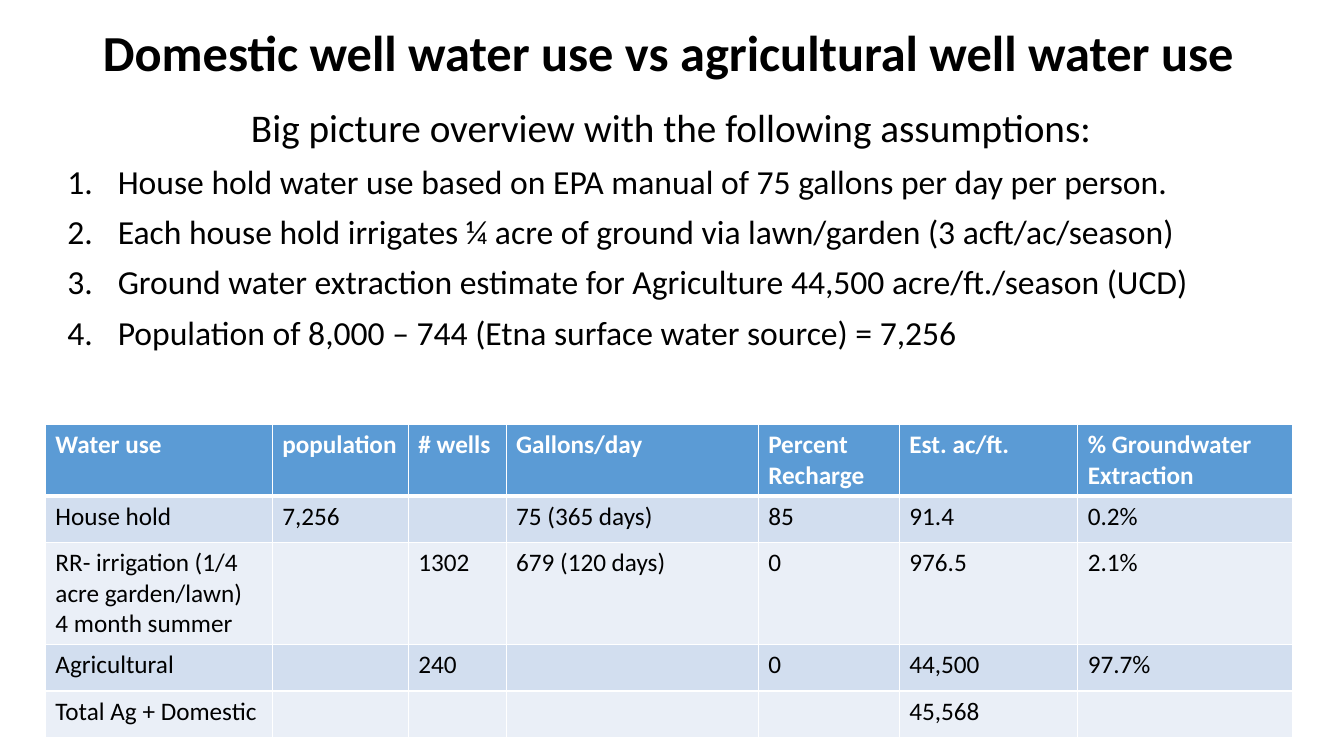
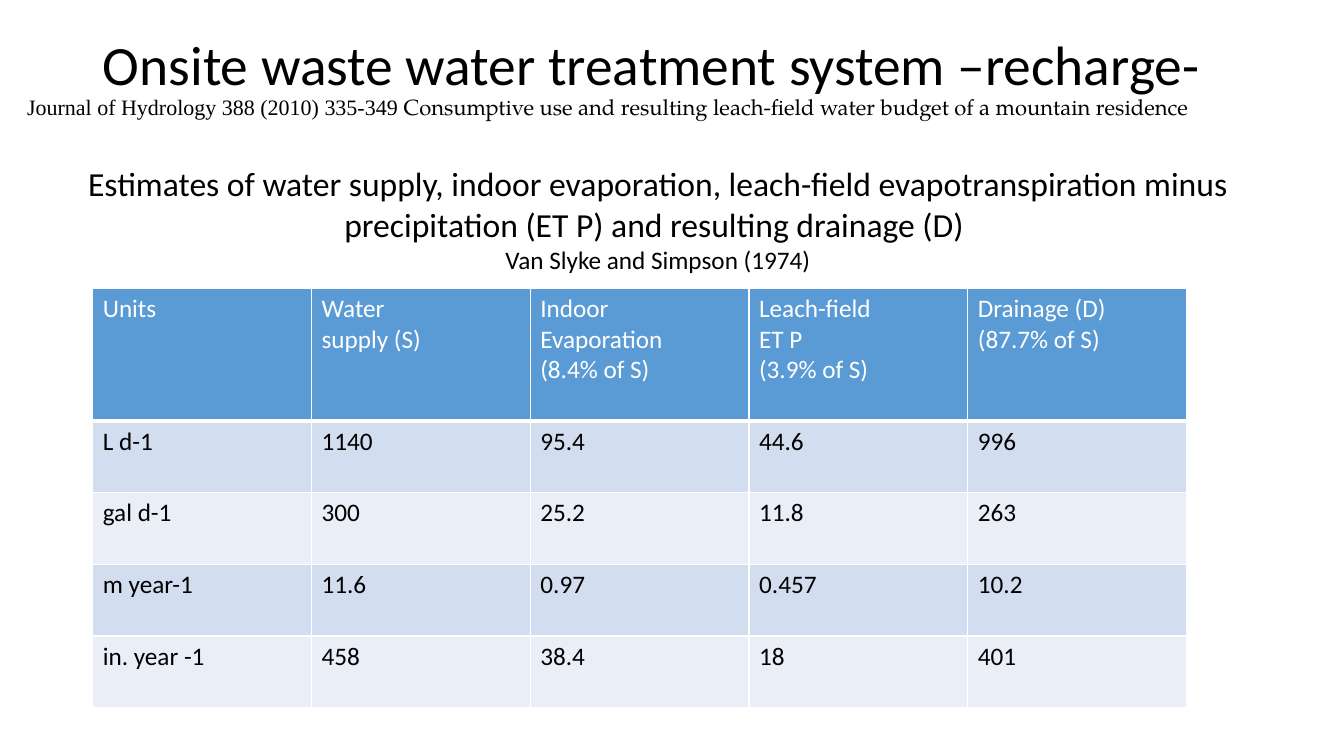
from lxml import etree
from pptx import Presentation
from pptx import util as u
from pptx.dml.color import RGBColor
from pptx.enum import text
from pptx.oxml import ns

INK = {"text": "000000", "white": "FFFFFF", "head": "5B9BD5",
       "odd": "D2DEEF", "even": "EAEFF7"}
FONT = "Calibri"
LEFT, MID = text.PP_ALIGN.LEFT, text.PP_ALIGN.CENTER
TOP, CORE = text.MSO_ANCHOR.TOP, text.MSO_ANCHOR.MIDDLE


def color(name):
    return RGBColor.from_string(INK[name])


def put(frame, words, size=18, font=FONT, ink="text", bold=False, align=LEFT,
        lead=1.0, gap=0, number=False, join=False):
    para = frame.paragraphs[-1]
    if para.runs and not join:
        para = frame.add_paragraph()
    if not join:
        para.alignment = align
        para.line_spacing = lead
        para.space_before = u.Pt(gap)
        if number:
            prop = para._p.get_or_add_pPr()
            prop.set("marL", str(u.Inches(0.5)))
            prop.set("indent", str(-u.Inches(0.5)))
            etree.SubElement(prop, ns.qn("a:buFont"), typeface="+mj-lt")
            etree.SubElement(prop, ns.qn("a:buAutoNum"), type="arabicPeriod")
    for i, line in enumerate(words.split("\n")):
        if i:
            para.add_line_break()
        run = para.add_run()
        run.text = line
        run.font.size = u.Pt(size)
        run.font.name = font
        run.font.bold = bold
        run.font.color.rgb = color(ink)


def setup(frame, anchor):
    frame.word_wrap = True
    frame.auto_size = text.MSO_AUTO_SIZE.NONE
    frame.vertical_anchor = anchor
    return frame


def head(slide, box, words, **fmt):
    title = slide.shapes.title
    title.left, title.top, title.width, title.height = map(u.Inches, box)
    put(setup(title.text_frame, CORE), words, lead=0.9, **fmt)


def area(slide, box):
    shape = slide.shapes.add_textbox(*map(u.Inches, box))
    return setup(shape.text_frame, TOP)


def edge(cell, low):
    prop = cell._tc.get_or_add_tcPr()
    for i, side in enumerate(("L", "R", "T", "B")):
        line = etree.Element(ns.qn("a:ln" + side))
        line.set("w", str(u.Pt(low if side == "B" else 1)))
        fill = etree.SubElement(line, ns.qn("a:solidFill"))
        etree.SubElement(fill, ns.qn("a:srgbClr"), val=INK["white"])
        prop.insert(i, line)


def grid(slide, left, top, cols, rows, data, bold):
    shape = slide.shapes.add_table(
        len(rows), len(cols), u.Inches(left), u.Inches(top),
        u.Inches(sum(cols)), u.Inches(sum(rows)))
    table = shape.table
    for col, wide in zip(table.columns, cols):
        col.width = u.Inches(wide)
    for r, (tall, line) in enumerate(zip(rows, data)):
        table.rows[r].height = u.Inches(tall)
        first = r == 0
        for c, words in enumerate(line):
            cell = table.cell(r, c)
            cell.fill.solid()
            cell.fill.fore_color.rgb = color(
                "head" if first else "odd" if r % 2 else "even")
            edge(cell, 3 if first else 1)
            if words:
                put(cell.text_frame, words, bold=bold and first,
                    ink="white" if first else "text")


def usage(slide):
    head(slide, (0.92, 0.21, 11.89, 0.67),
         "Domestic well water use vs agricultural well water use",
         size=36, bold=True)
    frame = area(slide, (0.57, 1.03, 12.17, 2.71))
    put(frame, "Big picture overview with the following assumptions:",
        size=28, align=MID, lead=0.9)
    for item in (
        "House hold water use based on EPA manual of 75 gallons per day per person.",
        "Each house hold irrigates ¼ acre of ground via lawn/garden (3 acft/ac/season)",
        "Ground water extraction estimate for Agriculture 44,500 acre/ft./season (UCD)",
        "Population of 8,000 – 744 (Etna surface water source) = 7,256",
    ):
        put(frame, item, size=24, lead=0.9, gap=10, number=True)
    data = [
        ("Water use", "population", "# wells", "Gallons/day",
         "Percent Recharge", "Est. ac/ft.", "% Groundwater Extraction"),
        ("House hold", "7,256", "", "75 (365 days)", "85", "91.4", "0.2%"),
        ("RR- irrigation (1/4 acre garden/lawn)\n4 month summer", "", "1302",
         "679 (120 days)", "0", "976.5", "2.1%"),
        ("Agricultural", "", "240", "", "0", "44,500", "97.7%"),
        ("Total Ag + Domestic", "", "", "", "", "45,568", ""),
    ]
    grid(slide, 0.45, 4.21, (2.25, 1.35, 0.97, 2.5, 1.4, 1.77, 2.13),
         (0.7, 0.46, 1.01, 0.46, 0.46), data, True)


def budget(slide):
    head(slide, (0.92, 0.4, 11.5, 0.55),
         "Onsite waste water treatment system –recharge-", size=39.6)
    frame = area(slide, (0.17, 0.95, 12.92, 0.85))
    put(frame, "Journal of Hydrology 388 (2010) 335-349 ", size=15.7,
        font="Times New Roman", lead=0.7)
    put(frame, "Consumptive use and resulting leach-ﬁeld water budget of a "
        "mountain residence", size=15.7, font="TeX Gyre Pagella", join=True)
    data = [
        ("Units", "Water\nsupply (S)", "Indoor\nEvaporation\n(8.4% of S)",
         "Leach-field\nET P\n(3.9% of S)", "Drainage (D)\n(87.7% of S)"),
        ("L d-1", "1140", "95.4", "44.6", "996"),
        ("gal d-1", "300", "25.2", "11.8", "263"),
        ("m year-1", "11.6", "0.97", "0.457", "10.2"),
        ("in. year -1", "458", "38.4", "18", "401"),
    ]
    grid(slide, 0.92, 2.86, [2.17] * 5, [1.32] + [0.71] * 4, data, False)
    frame = area(slide, (0.27, 1.57, 12.51, 1.51))
    put(frame, "Estimates of water supply, indoor evaporation, leach-field "
        "evapotranspiration minus\nprecipitation (ET P) and resulting "
        "drainage (D) ", size=24, align=MID)
    put(frame, "Van Slyke and Simpson (1974)", align=MID)


def main():
    deck = Presentation()
    deck.slide_width, deck.slide_height = u.Inches(13.33), u.Inches(7.5)
    for build in (usage, budget):
        build(deck.slides.add_slide(deck.slide_layouts[5]))
    deck.save("out.pptx")


if __name__ == "__main__":
    main()
